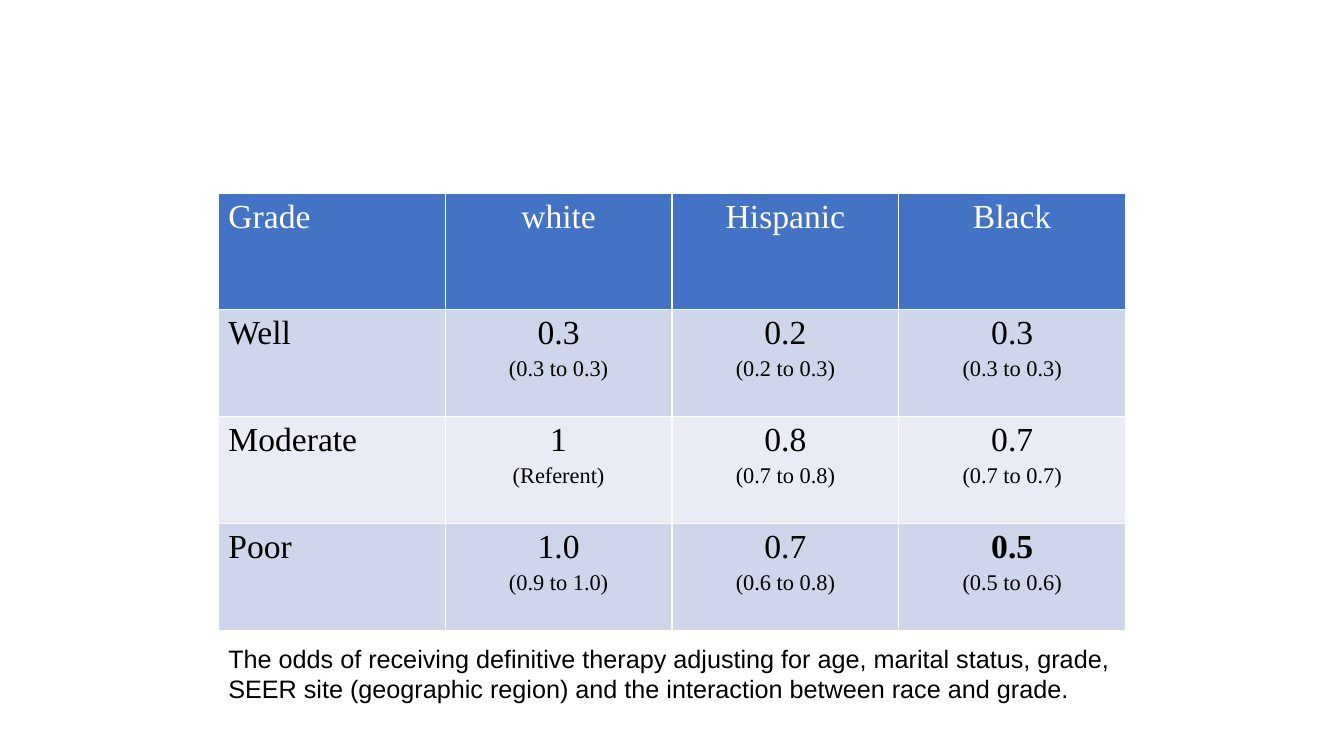
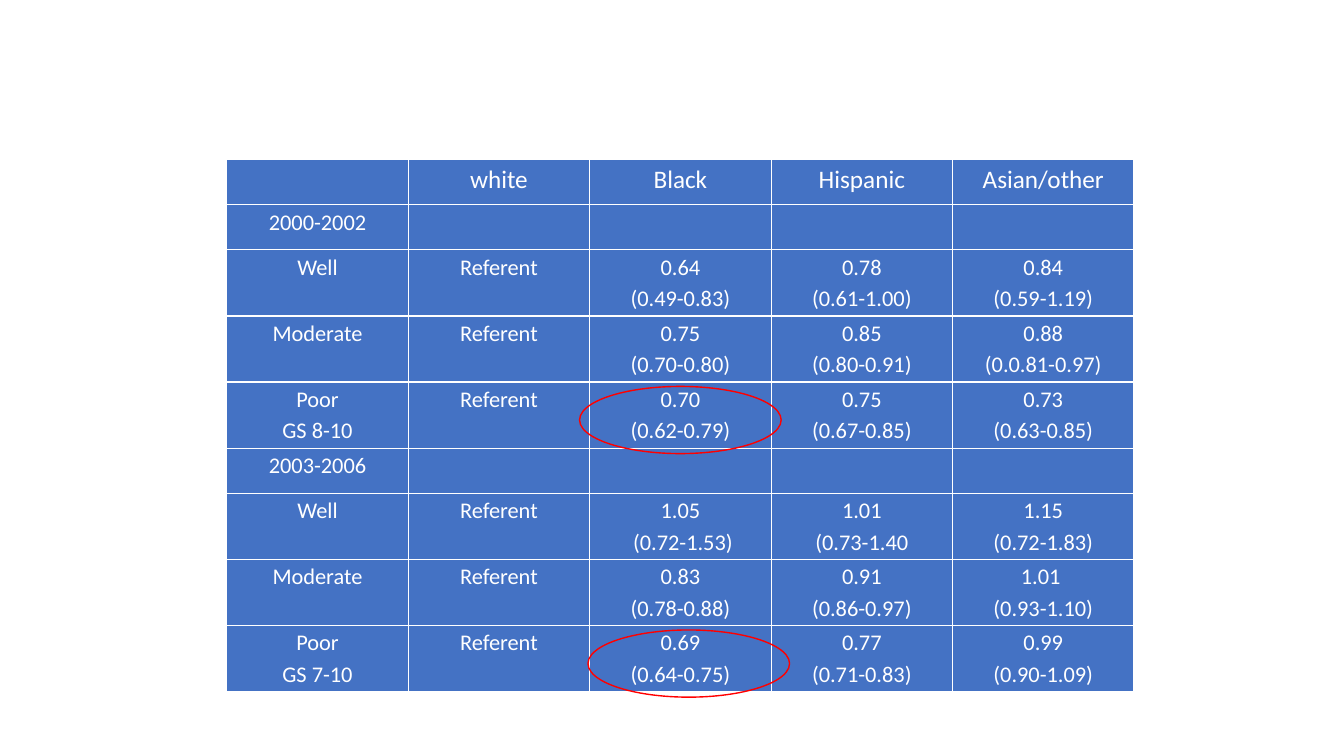
from pptx import Presentation
from pptx.dml.color import RGBColor
from pptx.enum.shapes import MSO_SHAPE
from pptx.enum.text import PP_ALIGN
from pptx.oxml import parse_xml
from pptx.oxml.ns import nsdecls
from pptx.util import Pt

PX = 9525  # EMU per px, 96 px to the inch
WHITE = RGBColor(0xFF, 0xFF, 0xFF)
BLACK = RGBColor(0x00, 0x00, 0x00)
BLUE = RGBColor(0x44, 0x72, 0xC4)
BAND_DARK = RGBColor(0xCF, 0xD5, 0xEA)
BAND_LIGHT = RGBColor(0xE9, 0xEB, 0xF5)
RED = RGBColor(0xFF, 0x00, 0x00)

ODDS_BY_GRADE = [
    ("Grade", "white", "Hispanic", "Black"),
    ("Well", "0.3\n(0.3 to 0.3)", "0.2\n(0.2 to 0.3)", "0.3\n(0.3 to 0.3)"),
    ("Moderate", "1\n(Referent)", "0.8\n(0.7 to 0.8)", "0.7\n(0.7 to 0.7)"),
    ("Poor", "1.0\n(0.9 to 1.0)", "0.7\n(0.6 to 0.8)", "0.5\n(0.5 to 0.6)"),
]
ODDS_NOTE = ("The odds of receiving definitive therapy adjusting for age, marital status, "
             "grade, SEER site (geographic region) and the interaction between race and grade.")
ODDS_BY_PERIOD = [
    ("", "white", "Black", "Hispanic", "Asian/other"),
    ("2000-2002", "", "", "", ""),
    ("Well", "Referent", "0.64\n(0.49-0.83)", "0.78\n(0.61-1.00)", "0.84\n(0.59-1.19)"),
    ("Moderate", "Referent", "0.75\n(0.70-0.80)", "0.85\n(0.80-0.91)", "0.88\n(0.0.81-0.97)"),
    ("Poor\nGS 8-10", "Referent", "0.70\n(0.62-0.79)", "0.75\n(0.67-0.85)", "0.73\n(0.63-0.85)"),
    ("2003-2006", "", "", "", ""),
    ("Well", "Referent", "1.05\n (0.72-1.53)", "1.01\n(0.73-1.40", "1.15\n(0.72-1.83)"),
    ("Moderate", "Referent", "0.83\n(0.78-0.88)", "0.91\n(0.86-0.97)", "1.01 \n(0.93-1.10)"),
    ("Poor\nGS 7-10", "Referent", "0.69\n(0.64-0.75)", "0.77\n(0.71-0.83)", "0.99\n(0.90-1.09)"),
]


def px(*lengths):
    return [n * PX for n in lengths]


def set_font(font, name, size, color):
    font.name, font.size, font.color.rgb = name, Pt(size), color


def style_cell(cell, fill):
    """Draw white 1 pt borders, then the fill, in the order the schema wants."""
    tc_pr = cell._tc.get_or_add_tcPr()
    for side in "LRTB":
        tc_pr.append(parse_xml(
            f'<a:ln{side} {nsdecls("a")} w="12700"><a:solidFill>'
            f'<a:srgbClr val="{WHITE}"/></a:solidFill></a:ln{side}>'))
    cell.fill.solid()
    cell.fill.fore_color.rgb = fill


def write_cell(cell, text, font, sizes, color, align):
    """Write one paragraph per line of text, each with its own size."""
    cell.text_frame.text = text
    for p, size in zip(cell.text_frame.paragraphs, sizes):
        p.alignment = align
        set_font(p.font, font, size, color)
        for r in p.runs:
            set_font(r.font, font, size, color)


def add_grid(slide, left, top, width, heights, rows):
    """Add a table with equal columns and no built-in banding."""
    box = px(left, top, width, sum(heights))
    table = slide.shapes.add_table(len(rows), len(rows[0]), *box).table
    table.first_row = table.horz_banding = False
    for column in table.columns:
        column.width = width * PX // len(rows[0])
    for row, height in zip(table.rows, heights):
        row.height = height * PX
    return table


def add_note(slide, text, box):
    tf = slide.shapes.add_textbox(*px(*box)).text_frame
    tf.word_wrap = True
    tf.text = text
    set_font(tf.paragraphs[0].runs[0].font, "Arial", 18, BLACK)


def add_ring(slide, left, top):
    sp = slide.shapes.add_shape(MSO_SHAPE.OVAL, *px(left, top, 192, 64))
    sp.shadow.inherit = False
    sp.fill.background()
    sp.line.color.rgb = RED
    sp.line.width = Pt(1)


def build_grade_slide(slide):
    table = add_grid(slide, 208, 184, 864, [111] + [102] * 3, ODDS_BY_GRADE)
    fills = [BLUE, BAND_DARK, BAND_LIGHT, BAND_DARK]
    for i, row in enumerate(ODDS_BY_GRADE):
        for j, text in enumerate(row):
            cell = table.cell(i, j)
            style_cell(cell, fills[i])
            write_cell(cell, text, "Times New Roman", (24, 16), BLACK if i else WHITE,
                       PP_ALIGN.CENTER if j else PP_ALIGN.LEFT)
            for p in cell.text_frame.paragraphs[1:]:
                p.space_before = Pt(3.2)
    table.cell(3, 3).text_frame.paragraphs[0].runs[0].font.bold = True
    add_note(slide, ODDS_NOTE, (208, 608, 880, 67))


def build_period_slide(slide):
    heights = [43, 43, 63, 63, 63, 43, 63, 63, 63]
    table = add_grid(slide, 216, 152, 864, heights, ODDS_BY_PERIOD)
    for i, row in enumerate(ODDS_BY_PERIOD):
        for j, text in enumerate(row):
            cell = table.cell(i, j)
            cell.margin_left = cell.margin_right = 7 * PX
            cell.margin_top = cell.margin_bottom = 0
            style_cell(cell, BLUE)
            write_cell(cell, text, "Calibri", (16, 16) if i else (18,), WHITE, PP_ALIGN.CENTER)
            for p in cell.text_frame.paragraphs:
                p.line_spacing = 1.15
    add_ring(slide, 560, 600)
    add_ring(slide, 552, 368)


def main():
    prs = Presentation()
    prs.slide_width, prs.slide_height = px(1280, 720)
    for build in (build_grade_slide, build_period_slide):
        build(prs.slides.add_slide(prs.slide_layouts[6]))
    prs.save("out.pptx")


if __name__ == "__main__":
    main()
